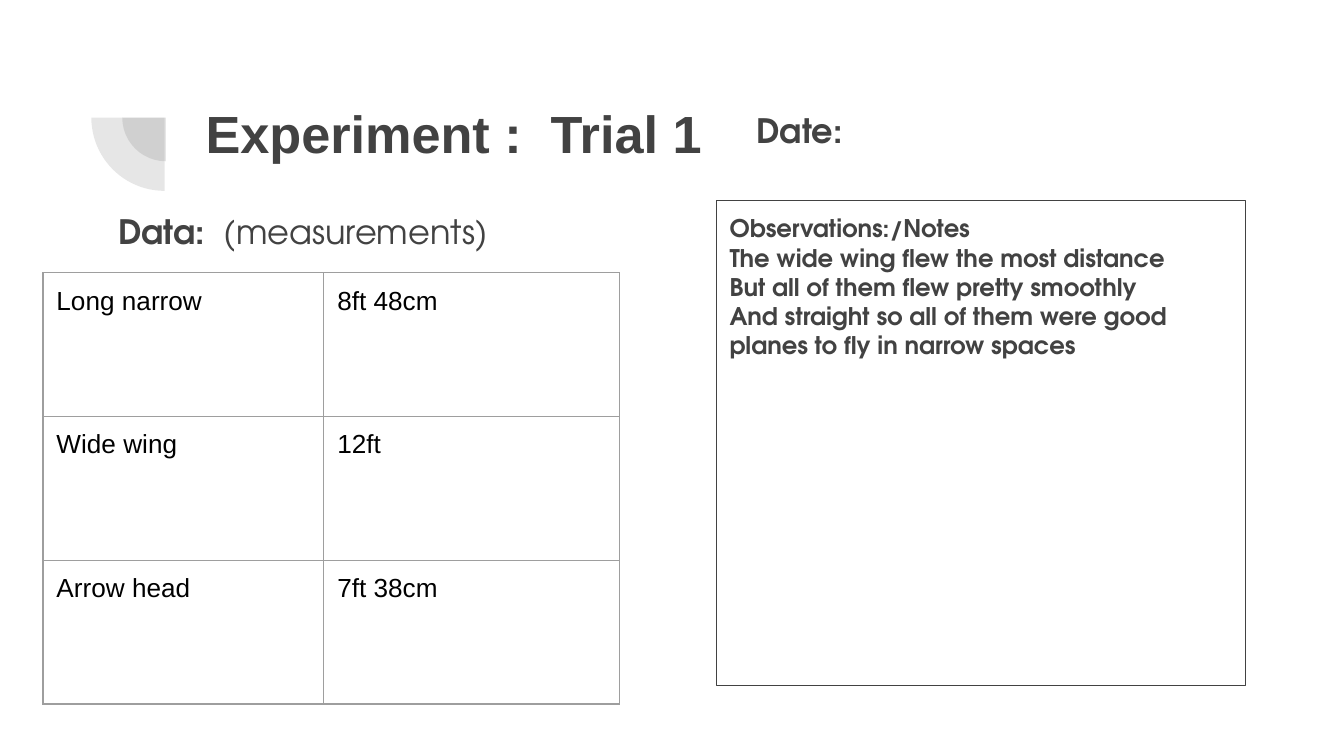
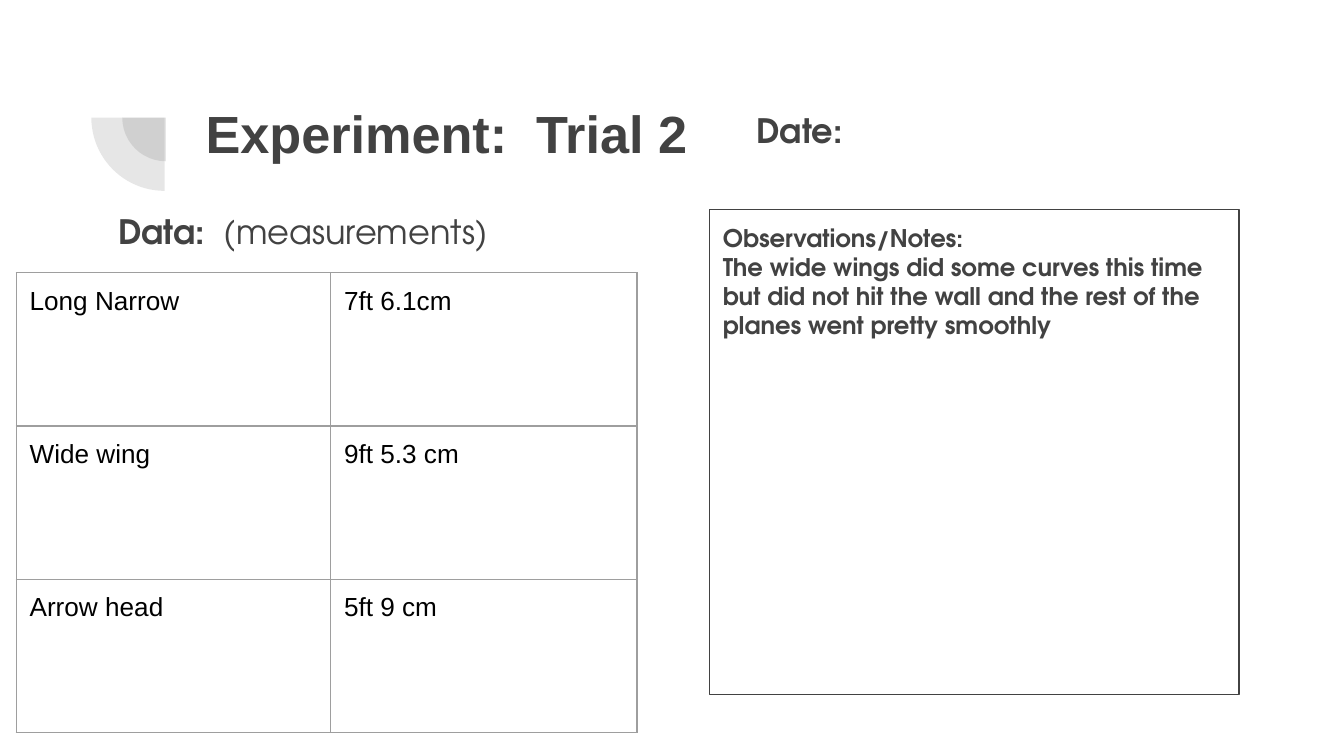
"""Builds two slides that record paper plane trials."""
from dataclasses import dataclass

from lxml import etree
from pptx import Presentation
from pptx import util as u
from pptx.dml.color import RGBColor
from pptx.enum import shapes, text
from pptx.oxml.ns import qn


@dataclass(frozen=True)
class Theme:
    ink: RGBColor = RGBColor.from_string("424242")
    cell_ink: RGBColor = RGBColor.from_string("000000")
    grid: str = "9E9E9E"
    heading_font: str = "Arial"
    body_font: str = "TeX Gyre Adventor"
    title_size: int = 28
    label_size: int = 18
    cell_size: int = 14
    note_size: int = 13
    rule_width: float = 0.75
    pie_alpha: int = 13000


theme = Theme()


def write(frame, lines, font, size, color, bold=True):
    """Fill a text frame with paragraphs of equal style."""
    frame.text = "\n".join(lines)
    frame.word_wrap = True
    frame.auto_size = text.MSO_AUTO_SIZE.NONE
    frame.vertical_anchor = text.MSO_ANCHOR.TOP
    frame.margin_left = frame.margin_right = u.Inches(0.1)
    frame.margin_top = frame.margin_bottom = u.Inches(0.1)
    for paragraph in frame.paragraphs:
        paragraph.alignment = text.PP_ALIGN.LEFT
        for run in paragraph.runs:
            run.font.name = font
            run.font.size = u.Pt(size)
            run.font.bold = bold
            run.font.color.rgb = color


def style_cell(cell, value):
    """Give a table cell its text, clear fill and grid lines."""
    write(cell.text_frame, [value], theme.heading_font, theme.cell_size,
          theme.cell_ink, bold=False)
    cell.margin_left = cell.margin_right = u.Inches(0.1)
    cell.margin_top = cell.margin_bottom = u.Inches(0.1)
    cell.vertical_anchor = text.MSO_ANCHOR.TOP
    cell.fill.background()
    properties = cell._tc.get_or_add_tcPr()
    for index, side in enumerate(("lnL", "lnR", "lnT", "lnB")):
        border = etree.Element(qn(f"a:{side}"), w=str(u.Pt(theme.rule_width)))
        fill = etree.SubElement(border, qn("a:solidFill"))
        etree.SubElement(fill, qn("a:srgbClr"), val=theme.grid)
        properties.insert(index, border)


trials = [
    {
        "title": "Experiment :  Trial 1",
        "title_size": (4.05, 0.71),
        "notes_at": (5.33, 1.49),
        "notes": [
            "Observations:/Notes",
            "The wide wing flew the most distance",
            "But all of them flew pretty smoothly",
            "And straight so all of them were good planes to fly in narrow spaces",
        ],
        "table_left": 0.32,
        "columns": (2.09, 2.2),
        "row_height": 1.07,
        "rows": [("Long narrow", "8ft 48cm"), ("Wide wing", "12ft"),
                 ("Arrow head", "7ft 38cm")],
    },
    {
        "title": "Experiment:  Trial 2",
        "title_size": (7.69, 1.09),
        "notes_at": (5.28, 1.56),
        "notes": [
            "Observations/Notes:",
            "The wide wings did some curves this time but did not hit the wall "
            "and the rest of the planes went pretty smoothly",
        ],
        "table_left": 0.12,
        "columns": (2.34, 2.28),
        "row_height": 1.14,
        "rows": [("Long Narrow", "7ft 6.1cm"), ("Wide wing", "9ft 5.3 cm"),
                 ("Arrow head", "5ft 9 cm")],
    },
]
labels = [("Data:  ", "(measurements)", 0.78, 1.47), ("Date:", "", 5.53, 0.72)]

presentation = Presentation()
presentation.slide_width = u.Inches(10)
presentation.slide_height = u.Inches(10 * 9 / 16)

for trial in trials:
    slide = presentation.slides.add_slide(presentation.slide_layouts[5])

    for left, top, diameter in ((0.91, 0.55, 0.65), (0.68, 0.33, 1.09)):
        pie = slide.shapes.add_shape(
            shapes.MSO_SHAPE.PIE, u.Inches(left), u.Inches(top),
            u.Inches(diameter), u.Inches(diameter))
        pie.adjustments[0] = 108
        pie.adjustments[1] = 162
        pie.rotation = 270
        pie.shadow.inherit = False
        pie.line.fill.background()
        pie.fill.solid()
        pie.fill.fore_color.rgb = theme.ink
        color = pie._element.spPr.find(".//" + qn("a:srgbClr"))
        etree.SubElement(color, qn("a:alpha"), val=str(theme.pie_alpha))

    title = slide.shapes.title
    title.left, title.top = u.Inches(1.43), u.Inches(0.65)
    title.width, title.height = map(u.Inches, trial["title_size"])
    write(title.text_frame, [trial["title"]], theme.heading_font,
          theme.title_size, theme.ink)

    notes = slide.shapes.add_shape(
        shapes.MSO_SHAPE.RECTANGLE, *map(u.Inches, trial["notes_at"]),
        u.Inches(3.94), u.Inches(3.61))
    notes.shadow.inherit = False
    notes.fill.background()
    notes.line.color.rgb = theme.ink
    notes.line.width = u.Pt(theme.rule_width)
    write(notes.text_frame, trial["notes"], theme.body_font,
          theme.note_size, theme.ink)

    for name, detail, left, top in labels:
        label = slide.shapes.add_textbox(
            u.Inches(left), u.Inches(top), u.Inches(4.22), u.Inches(0.45))
        write(label.text_frame, [name], theme.body_font, theme.label_size, theme.ink)
        if detail:
            run = label.text_frame.paragraphs[0].add_run()
            run.text = detail
            run.font.name = theme.body_font
            run.font.size = u.Pt(theme.label_size)
            run.font.bold = False
            run.font.color.rgb = theme.ink

    rows = trial["rows"]
    table = slide.shapes.add_table(
        len(rows), len(trial["columns"]), u.Inches(trial["table_left"]),
        u.Inches(2.03), u.Inches(sum(trial["columns"])),
        u.Inches(trial["row_height"] * len(rows))).table
    table.first_row = table.horz_banding = False
    for column, width in zip(table.columns, trial["columns"]):
        column.width = u.Inches(width)
    for row, values in zip(table.rows, rows):
        row.height = u.Inches(trial["row_height"])
        for cell, value in zip(row.cells, values):
            style_cell(cell, value)

presentation.save("out.pptx")
